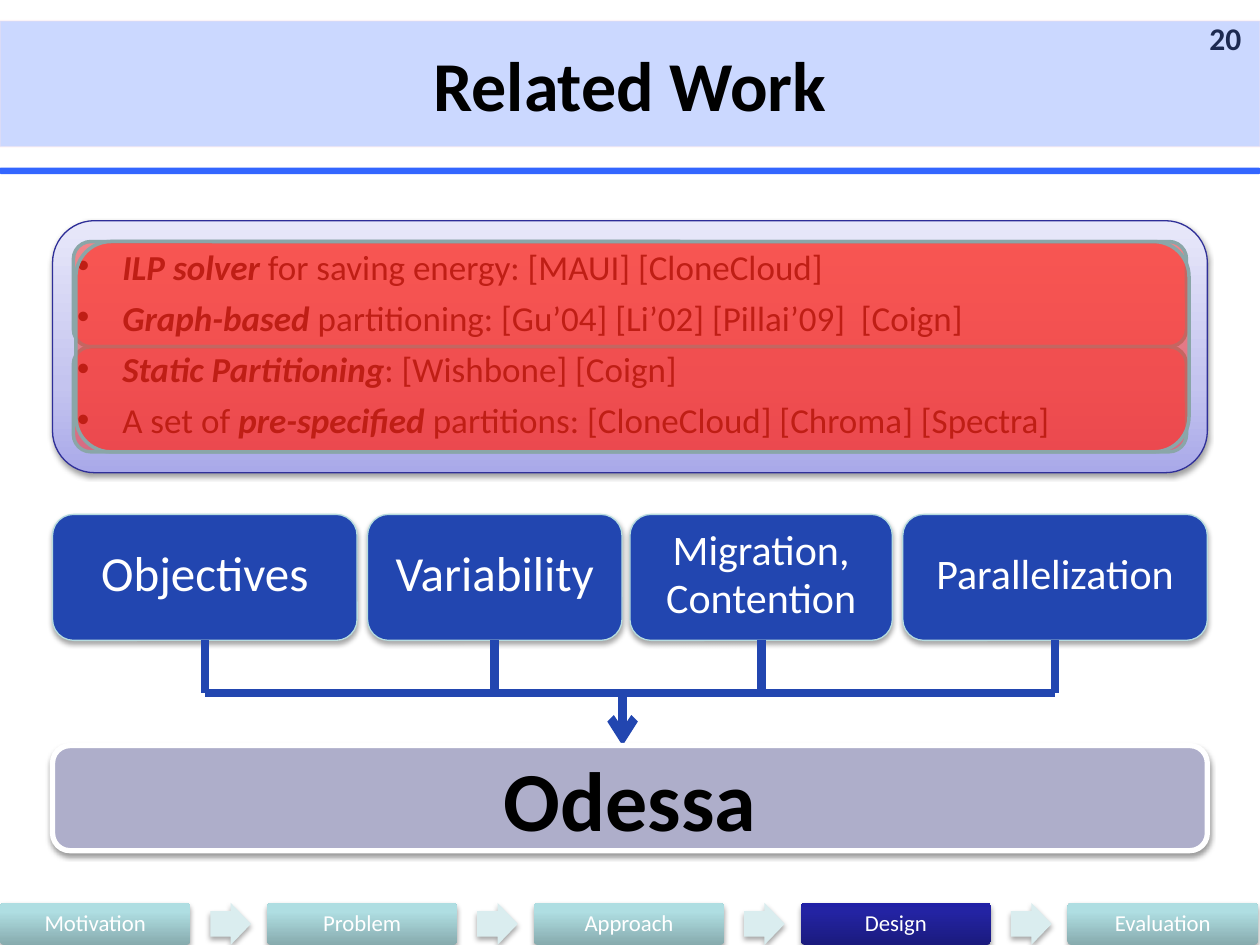
from lxml.etree import SubElement
from pptx import Presentation
from pptx.dml.color import RGBColor
from pptx.enum.shapes import MSO_CONNECTOR, MSO_SHAPE as SHAPE
from pptx.enum.text import MSO_ANCHOR, PP_ALIGN
from pptx.oxml.ns import qn
from pptx.util import Cm, Pt

FONT = "Calibri"
BLUE = "2246B0"
TEAL = [(0, "87ABAE"), (80, "AFDEE2"), (100, "AFE0E4")]
NAVY = [(0, "1B1B7E"), (80, "2323A3"), (100, "2020A6")]
LAVENDER = [(0, "A9A9E9"), (35, "C4C4EF"), (100, "E8E8FA")]
LEFT, WIDTH = 1.06, 23.28
FACTOR_TOP, FACTOR_BOTTOM, BUS, RESULT_TOP = 10.37, 12.91, 13.97, 15.03

WORKS = [
    [("ILP solver", True), (" for saving energy: [MAUI] [CloneCloud]", False)],
    [("Graph-based", True),
     (" partitioning: [Gu’04] [Li’02] [Pillai’09]  [Coign]", False)],
    [("Static Partitioning", True), (": [Wishbone] [Coign]", False)],
    [("A set of ", False), ("pre-specified", True),
     (" partitions: [CloneCloud] [Chroma] [Spectra]", False)],
]
FACTORS = [
    (1.06, 6.14, 28, ["Objectives"]),
    (7.41, 5.13, 28, ["Variability"]),
    (12.7, 5.29, 24, ["Migration,", "Contention"]),
    (18.2, 6.14, 24, ["Parallelization"]),
]
STEPS = ["Motivation", "Problem", "Approach", "Design", "Evaluation"]
COVERS = [(1.48, 4.87, 2.12), (1.48, 6.99, 2.12), (1.53, 4.87, 4.24)]


def rgb(value):
    """Turn a hex string into a colour."""
    return RGBColor.from_string(value)


def set_alpha(fill_parent, percent):
    """Make the solid fill below an element partly opaque."""
    color = fill_parent.find(qn("a:solidFill"))[0]
    SubElement(color, qn("a:alpha"), val=str(percent * 1000))


def set_gradient(sp, stops):
    """Fill a shape with a gradient that runs from bottom to top."""
    sp.fill.gradient()
    sp.fill.gradient_angle = 90
    stop_list = sp.fill._xPr.find(qn("a:gradFill")).find(qn("a:gsLst"))
    for old in list(stop_list):
        stop_list.remove(old)
    for position, color in stops:
        gs = SubElement(stop_list, qn("a:gs"), pos=str(position * 1000))
        SubElement(gs, qn("a:srgbClr"), val=color)


def add_shadow(sp, alpha):
    """Drop a soft shadow straight below a shape."""
    effects = sp._element.spPr.find(qn("a:effectLst"))
    outer = SubElement(effects, qn("a:outerShdw"), blurRad=str(Pt(3.1)),
                       dist=str(Pt(1.7)), dir="5400000", rotWithShape="0")
    color = SubElement(outer, qn("a:srgbClr"), val="000000")
    SubElement(color, qn("a:alpha"), val=str(alpha * 1000))


def add_box(s, kind, box, fill, line=None, width=0.75, alpha=None, shadow=None):
    """Add a preset shape with a solid or gradient fill."""
    sp = s.shapes.add_shape(kind, *map(Cm, box))
    sp.shadow.inherit = False
    if isinstance(fill, str):
        sp.fill.solid()
        sp.fill.fore_color.rgb = rgb(fill)
    else:
        set_gradient(sp, fill)
    if line:
        sp.line.color.rgb = rgb(line)
        sp.line.width = Pt(width)
    else:
        sp.line.fill.background()
    if alpha:
        set_alpha(sp._element.spPr, alpha)
    if shadow:
        add_shadow(sp, shadow)
    return sp


def set_text(sp, lines, size, color, bold=False, spacing=1.0,
             align=PP_ALIGN.CENTER):
    """Write plain lines into a shape, centred vertically."""
    tf = sp.text_frame
    tf.word_wrap = True
    tf.vertical_anchor = MSO_ANCHOR.MIDDLE
    tf.text = "\n".join(lines)
    for i, p in enumerate(tf.paragraphs):
        p.alignment = align
        p.line_spacing = spacing
        p.space_before = Pt(size * 0.2 if i else 0)
        p.font.name, p.font.size, p.font.bold = FONT, Pt(size), bold
        p.font.color.rgb = rgb(color)


def add_bullets(sp, items):
    """Write a bulleted list whose key terms are bold italic."""
    tf = sp.text_frame
    tf.word_wrap = True
    tf.vertical_anchor = MSO_ANCHOR.MIDDLE
    for i, item in enumerate(items):
        p = tf.add_paragraph() if i else tf.paragraphs[0]
        p.alignment = PP_ALIGN.LEFT
        p.line_spacing = 0.8
        p.space_before, p.space_after = Pt(4 if i else 0), Pt(6)
        props = p._p.get_or_add_pPr()
        props.set("marL", str(Cm(0.91)))
        props.set("indent", str(Cm(-0.91)))
        SubElement(props, qn("a:buFont"), typeface="Arial")
        SubElement(props, qn("a:buChar"), char="•")
        p.font.size = Pt(20)
        for text, key in item:
            r = p.add_run()
            r.text = text
            r.font.name, r.font.size = FONT, Pt(20)
            r.font.bold = r.font.italic = key
            r.font.color.rgb = rgb("000000")


def add_line(s, x1, y1, x2, y2, arrow=False):
    """Add a thick straight connector, with an arrowhead on request."""
    c = s.shapes.add_connector(MSO_CONNECTOR.STRAIGHT, *map(Cm, (x1, y1, x2, y2)))
    c.line.color.rgb = rgb(BLUE)
    c.line.width = Pt(5)
    if arrow:
        SubElement(c.line._get_or_add_ln(), qn("a:tailEnd"), type="arrow")
    SubElement(c._element.spPr, qn("a:effectLst"))


def add_header(s):
    """Add the rule, the slide number and the title band."""
    add_box(s, SHAPE.ROUNDED_RECTANGLE, (0, 3.38, 25.4, 0.13), "3366FF")
    number = s.shapes.add_textbox(*map(Cm, (24.13, 0.42, 1.27, 0.85)))
    set_text(number, ["20"], 18, "161616", True, 0.8, PP_ALIGN.LEFT)
    title = add_box(s, SHAPE.RECTANGLE, (0, 0.42, 25.4, 2.54), "3366FF",
                    "FFE4E5", 1, alpha=25)
    set_alpha(title.line._get_or_add_ln(), 30)
    set_text(title, ["Related Work"], 40, "000000", True)


def add_factors(s):
    """Add the factor boxes and the lines that join them to the result."""
    centers = []
    for left, width, size, lines in FACTORS:
        box = (left, FACTOR_TOP, width, FACTOR_BOTTOM - FACTOR_TOP)
        sp = add_box(s, SHAPE.ROUNDED_RECTANGLE, box, BLUE, "B6DCDF", shadow=35)
        set_text(sp, lines, size, "FFFFFF", spacing=0.8)
        centers.append(left + width / 2)
    for x in centers:
        add_line(s, x, FACTOR_BOTTOM, x, BUS)
    add_line(s, centers[0], BUS, centers[-1], BUS)
    add_line(s, 12.55, BUS, 12.55, RESULT_TOP, arrow=True)


def add_steps(s, current):
    """Add the row of talk sections with the current one highlighted."""
    top, height, pitch = 18.2, 0.85, 5.38
    for i, name in enumerate(STEPS):
        left = i * pitch
        sp = add_box(s, SHAPE.ROUNDED_RECTANGLE, (left, top, 3.84, height),
                     NAVY if name == current else TEAL, shadow=35)
        sp.adjustments[0] = 0.1
        tf = sp.text_frame
        tf.margin_left = tf.margin_right = tf.margin_top = tf.margin_bottom = Cm(0.13)
        set_text(sp, [name], 13, "FFFFFF", spacing=0.9)
        if i < len(STEPS) - 1:
            arrow = add_box(s, SHAPE.RIGHT_ARROW, (left + 4.24, top, 0.82, height),
                            "DAEDEF", shadow=35)
            arrow.adjustments[0] = 0.6


def main():
    """Build the slide and save it."""
    prs = Presentation()
    prs.slide_width, prs.slide_height = Cm(25.4), Cm(19.05)
    s = prs.slides.add_slide(prs.slide_layouts[6])
    add_header(s)
    works = add_box(s, SHAPE.ROUNDED_RECTANGLE, (LEFT, 4.45, WIDTH, 5.08),
                    LAVENDER, "2F2F98", shadow=38)
    add_bullets(works, WORKS)
    add_factors(s)
    result = add_box(s, SHAPE.ROUNDED_RECTANGLE, (LEFT, RESULT_TOP, WIDTH, 2.12),
                     "AEAECA", "FFFFFF", 3, shadow=38)
    set_text(result, ["Odessa"], 48, "000000", True)
    add_steps(s, "Design")
    for left, top, height in COVERS:
        add_box(s, SHAPE.ROUNDED_RECTANGLE, (left, top, 22.44, height),
                "FF281C", "8AA6A8", 2, alpha=50)
    prs.save("out.pptx")


if __name__ == "__main__":
    main()
